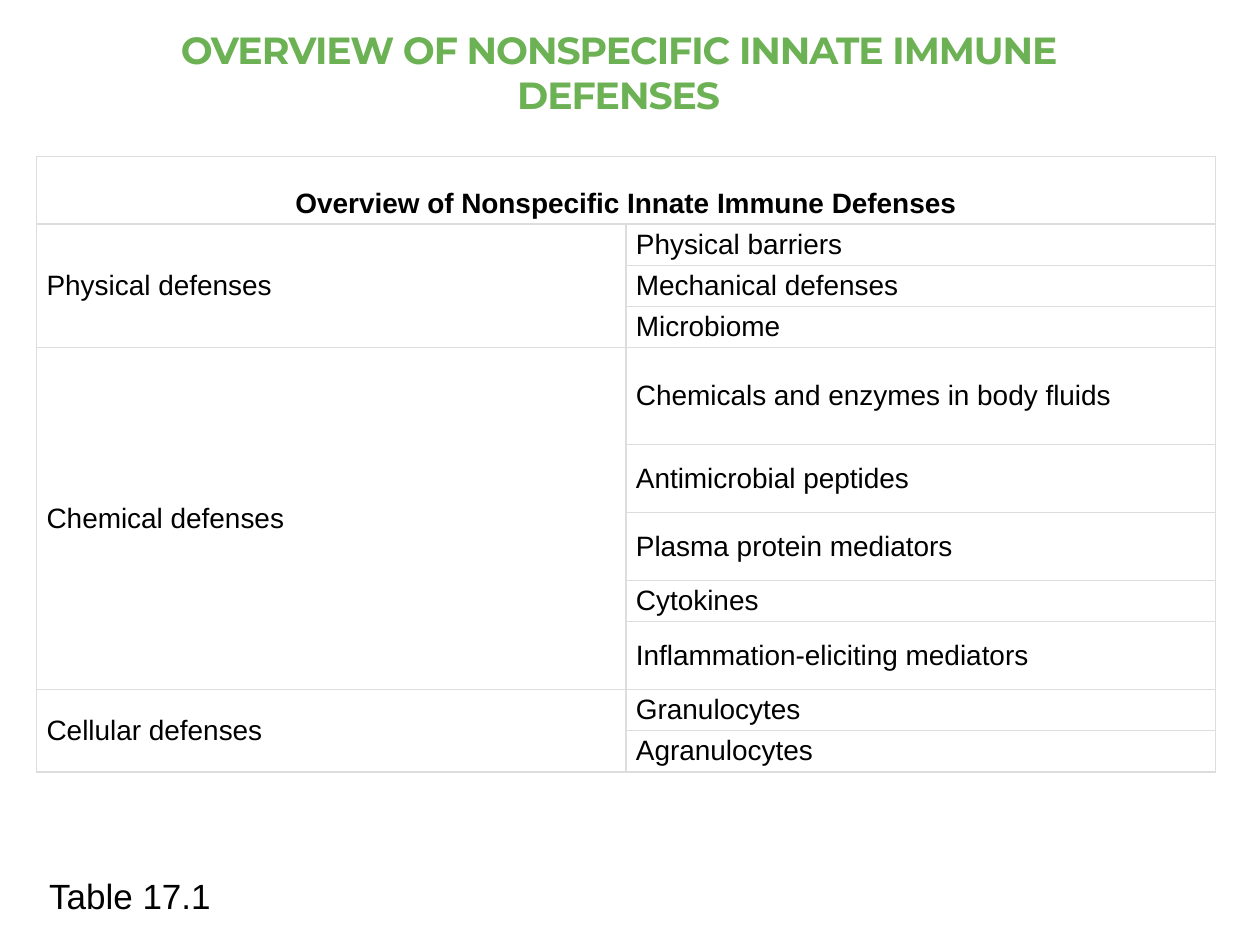
from dataclasses import dataclass

from lxml import etree
from pptx import Presentation
from pptx.dml.color import RGBColor
from pptx.enum.text import MSO_ANCHOR, MSO_AUTO_SIZE, PP_ALIGN
from pptx.oxml.ns import qn
from pptx.util import Cm, Pt

CENTER, LEFT = PP_ALIGN.CENTER, PP_ALIGN.LEFT
MIDDLE, BOTTOM = MSO_ANCHOR.MIDDLE, MSO_ANCHOR.BOTTOM
NO_AUTOFIT = MSO_AUTO_SIZE.NONE
TITLE_ONLY = 5


@dataclass(frozen=True)
class Theme:
    green: RGBColor = RGBColor(0x6C, 0xB2, 0x55)
    black: RGBColor = RGBColor(0, 0, 0)
    white: RGBColor = RGBColor(255, 255, 255)
    border: str = "DDDDDD"
    title_font: str = "Montserrat"
    body_font: str = "Arial"
    title_size: float = 21.6
    caption_size: float = 20
    table_size: float = 16


THEME = Theme()
SHORT, TALL, TALLEST = 0.82, 1.37, 1.96  # row heights in cm

# Each category with its defenses and their row heights
DEFENSES = {
    "Physical defenses": [
        ("Physical barriers", SHORT),
        ("Mechanical defenses", SHORT),
        ("Microbiome", SHORT),
    ],
    "Chemical defenses": [
        ("Chemicals and enzymes in body fluids", TALLEST),
        ("Antimicrobial peptides", TALL),
        ("Plasma protein mediators", TALL),
        ("Cytokines", SHORT),
        ("Inflammation-eliciting mediators", TALL),
    ],
    "Cellular defenses": [
        ("Granulocytes", SHORT),
        ("Agranulocytes", SHORT),
    ],
}


def write(paragraph, text, font, size, color, bold=False, align=LEFT):
    paragraph.text = text
    paragraph.alignment = align
    paragraph.font.name = font
    paragraph.font.size = Pt(size)
    paragraph.font.bold = bold
    paragraph.font.color.rgb = color


def add_borders(cell):
    properties = cell._tc.get_or_add_tcPr()
    for position, side in enumerate(("lnL", "lnR", "lnT", "lnB")):
        line = etree.Element(qn(f"a:{side}"), w=str(Pt(1)))
        fill = etree.SubElement(line, qn("a:solidFill"))
        etree.SubElement(fill, qn("a:srgbClr"), val=THEME.border)
        properties.insert(position, line)


prs = Presentation()
prs.slide_width, prs.slide_height = Cm(25.4), Cm(19.05)
slide = prs.slides.add_slide(prs.slide_layouts[TITLE_ONLY])

# Title
title = slide.shapes.title
title.left, title.top, title.width, title.height = Cm(1.27), Cm(0.66), Cm(22.4), Cm(1.83)
title_frame = title.text_frame
title_frame.auto_size = NO_AUTOFIT
title_frame.vertical_anchor = BOTTOM
title_frame.margin_left = title_frame.margin_right = Cm(0.5)
heading = title_frame.paragraphs[0]
write(heading, "OVERVIEW OF NONSPECIFIC INNATE IMMUNE DEFENSES",
      THEME.title_font, THEME.title_size, THEME.green, True, CENTER)
heading.runs[0].font._element.set("spc", "-60")

# Table
row_heights = [TALL] + [height for rows in DEFENSES.values() for _, height in rows]
table = slide.shapes.add_table(
    len(row_heights), 2, Cm(0.74), Cm(3.15), Cm(23.76), Cm(sum(row_heights))
).table
for row, height in zip(table.rows, row_heights):
    row.height = Cm(height)
    for cell in row.cells:
        cell.fill.solid()
        cell.fill.fore_color.rgb = THEME.white
        cell.margin_left = cell.margin_right = Cm(0.2)
        cell.margin_top = cell.margin_bottom = Cm(0.1)
        cell.vertical_anchor = MIDDLE
        add_borders(cell)

# Table header
header = table.cell(0, 0)
header.merge(table.cell(0, 1))
header.vertical_anchor = BOTTOM
write(header.text_frame.paragraphs[0], "Overview of Nonspecific Innate Immune Defenses",
      THEME.body_font, THEME.table_size, THEME.black, True, CENTER)

# Categories, each merged across its defenses
first = 1
for category, rows in DEFENSES.items():
    table.cell(first, 0).merge(table.cell(first + len(rows) - 1, 0))
    entries = [(first, 0, category)]
    entries += [(first + i, 1, defense) for i, (defense, _) in enumerate(rows)]
    for row, column, text in entries:
        write(table.cell(row, column).text_frame.paragraphs[0], text,
              THEME.body_font, THEME.table_size, THEME.black)
    first += len(rows)

# Caption
caption = slide.shapes.add_textbox(Cm(0.74), Cm(17.5), Cm(22.4), Cm(1.02)).text_frame
caption.word_wrap = True
label = caption.paragraphs[0]
write(label, "Table 17.1", THEME.body_font, THEME.caption_size, THEME.black)
label.space_after = Pt(6)

prs.save("out.pptx")
